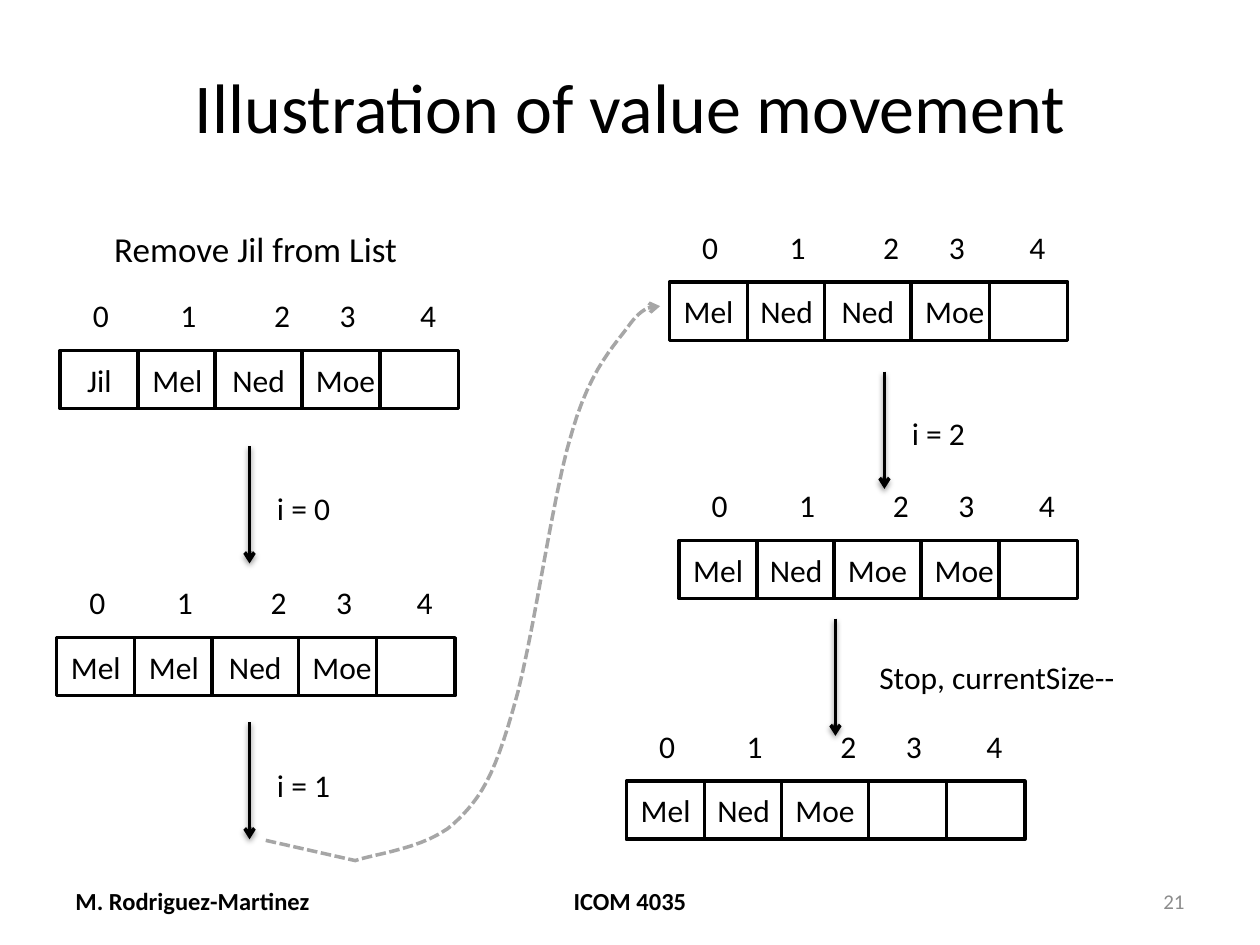
"""Build a slide that shows list values shifting left after a removal."""
from dataclasses import dataclass

from lxml.etree import SubElement
from pptx import Presentation
from pptx.dml.color import RGBColor
from pptx.enum.dml import MSO_LINE
from pptx.enum.shapes import MSO_CONNECTOR, MSO_SHAPE
from pptx.enum.text import MSO_ANCHOR, MSO_AUTO_SIZE, PP_ALIGN
from pptx.oxml import parse_xml
from pptx.oxml.ns import nsdecls, qn
from pptx.util import Pt


@dataclass(frozen=True)
class Theme:
    font: str = "Calibri"
    black: RGBColor = RGBColor(0, 0, 0)
    white: RGBColor = RGBColor(255, 255, 255)
    path_gray: RGBColor = RGBColor(0xA6, 0xA6, 0xA6)
    number_gray: RGBColor = RGBColor(0x8C, 0x8C, 0x8C)
    title: int = 40
    heading: int = 20
    body: int = 18
    footer: int = 14
    number: int = 12
    line: int = 2


theme = Theme()


def write(text, *, shape, size=theme.body, color=theme.black, bold=False,
          align=PP_ALIGN.LEFT, anchor=MSO_ANCHOR.MIDDLE, wrap=True):
    frame = shape.text_frame
    frame.word_wrap = wrap
    frame.auto_size = MSO_AUTO_SIZE.NONE if wrap else MSO_AUTO_SIZE.SHAPE_TO_FIT_TEXT
    frame.vertical_anchor = anchor
    paragraph = frame.paragraphs[0]
    paragraph.alignment = align
    run = paragraph.add_run()
    run.text = text
    run.font.name = theme.font
    run.font.size = Pt(size)
    run.font.bold = bold
    run.font.color.rgb = color
    return paragraph


def add_arrowhead(line):
    SubElement(line._get_or_add_ln(), qn("a:tailEnd"), type="arrow")


presentation = Presentation()
presentation.slide_width, presentation.slide_height = Pt(720), Pt(540)
slide = presentation.slides.add_slide(presentation.slide_layouts[5])
shapes = slide.shapes

title = shapes.title
title.left, title.top, title.width, title.height = Pt(36), Pt(21.6), Pt(648), Pt(77)
write("Illustration of value movement", shape=title, size=theme.title, align=PP_ALIGN.CENTER)

footers = [
    ("M. Rodriguez-Martinez", 36, 168, PP_ALIGN.LEFT, theme.footer, theme.black, True),
    ("ICOM 4035", 246, 228, PP_ALIGN.CENTER, theme.footer, theme.black, True),
    ("21", 516, 168, PP_ALIGN.RIGHT, theme.number, theme.number_gray, False),
]
for text, left, width, align, size, color, bold in footers:
    box = shapes.add_textbox(Pt(left), Pt(500.5), Pt(width), Pt(28.75))
    write(text, shape=box, size=size, color=color, bold=bold, align=align)

cells = [(0, 44.8), (44.6, 44.8), (88.6, 49.7), (138.2, 49.7), (182.9, 44.8)]
index_tabs = [50, 103.5, 141, 187]
arrays = [
    (34.4, 200.2, ["Jil", "Mel", "Ned", "Moe", ""]),
    (32.4, 364.4, ["Mel", "Mel", "Ned", "Moe", ""]),
    (388, 308.9, ["Mel", "Ned", "Moe", "Moe", ""]),
    (382.5, 161.3, ["Mel", "Ned", "Ned", "Moe", ""]),
    (358, 446.4, ["Mel", "Ned", "Moe", "", ""]),
]
for array_left, array_top, values in arrays:
    group = shapes.add_group_shape()
    for value, (offset, width) in zip(values, cells):
        cell = group.shapes.add_shape(MSO_SHAPE.RECTANGLE, Pt(array_left + offset),
                                      Pt(array_top), Pt(width), Pt(33.2))
        cell.shadow.inherit = False
        cell.fill.solid()
        cell.fill.fore_color.rgb = theme.white
        cell.line.color.rgb = theme.black
        cell.line.width = Pt(theme.line)
        if value:
            write(value, shape=cell, align=PP_ALIGN.CENTER)
    indices = group.shapes.add_textbox(Pt(array_left + 11.6), Pt(array_top - 34.6),
                                       Pt(212.4), Pt(29))
    paragraph = write("\t".join("01234"), shape=indices, anchor=MSO_ANCHOR.TOP)
    tab_list = SubElement(paragraph._p.get_or_add_pPr(), qn("a:tabLst"))
    for position in index_tabs:
        SubElement(tab_list, qn("a:tab"), pos=str(Pt(position)), algn="l")

for arrow_left, arrow_top in [(142.6, 255), (142.6, 412.6), (505.4, 212.4), (477.4, 353.5)]:
    arrow = shapes.add_connector(MSO_CONNECTOR.STRAIGHT, Pt(arrow_left), Pt(arrow_top),
                                 Pt(arrow_left), Pt(arrow_top + 67))
    arrow.line.color.rgb = theme.black
    arrow.line.width = Pt(theme.line)
    add_arrowhead(arrow.line)
    arrow._element.spPr.append(parse_xml(
        f'<a:effectLst {nsdecls("a")}><a:outerShdw blurRad="{Pt(3.1)}" dist="{Pt(1.6)}" '
        f'dir="5400000" rotWithShape="0"><a:srgbClr val="{theme.black}">'
        '<a:alpha val="38000"/></a:srgbClr></a:outerShdw></a:effectLst>'))

captions = [
    ("i = 0", 151.2, 275.8, 45.4, theme.body),
    ("i = 1", 151.2, 434.2, 45.4, theme.body),
    ("i = 2", 514, 233.3, 45.4, theme.body),
    ("Stop, currentSize--", 495.4, 372.4, 151.2, theme.body),
    ("Remove Jil from List", 58.2, 126.7, 178.6, theme.heading),
]
for text, left, top, width, size in captions:
    box = shapes.add_textbox(Pt(left), Pt(top), Pt(width), Pt(size * 1.6))
    write(text, shape=box, size=size, anchor=MSO_ANCHOR.TOP, wrap=False)

curves = [
    [(2.82, 6.83), (2.96, 6.78), (3.4, 6.73), (3.61, 6.53)],
    [(3.61, 6.53), (3.82, 6.33), (3.92, 6.16), (4.07, 5.64)],
    [(4.07, 5.64), (4.23, 5.12), (4.38, 3.94), (4.54, 3.43)],
    [(4.54, 3.43), (4.69, 2.91), (4.89, 2.73), (5.01, 2.56)],
    [(5.01, 2.56), (5.13, 2.4), (5.24, 2.43), (5.24, 2.43)],
]
steps = 12
path_points = [(2.82, 6.83)]
for curve in curves:
    for step in range(1, steps + 1):
        t = step / steps
        weights = [(1 - t) ** 3, 3 * t * (1 - t) ** 2, 3 * t ** 2 * (1 - t), t ** 3]
        path_points.append(tuple(sum(weight * point[axis] for weight, point in zip(weights, curve))
                                 for axis in (0, 1)))
builder = shapes.build_freeform(Pt(2.11 * 72), Pt(6.67 * 72))
builder.add_line_segments([(Pt(x * 72), Pt(y * 72)) for x, y in path_points], close=False)
continuation = builder.convert_to_shape()
continuation.shadow.inherit = False
continuation.fill.background()
continuation.line.color.rgb = theme.path_gray
continuation.line.width = Pt(theme.line)
continuation.line.dash_style = MSO_LINE.SQUARE_DOT
add_arrowhead(continuation.line)

presentation.save("out.pptx")
